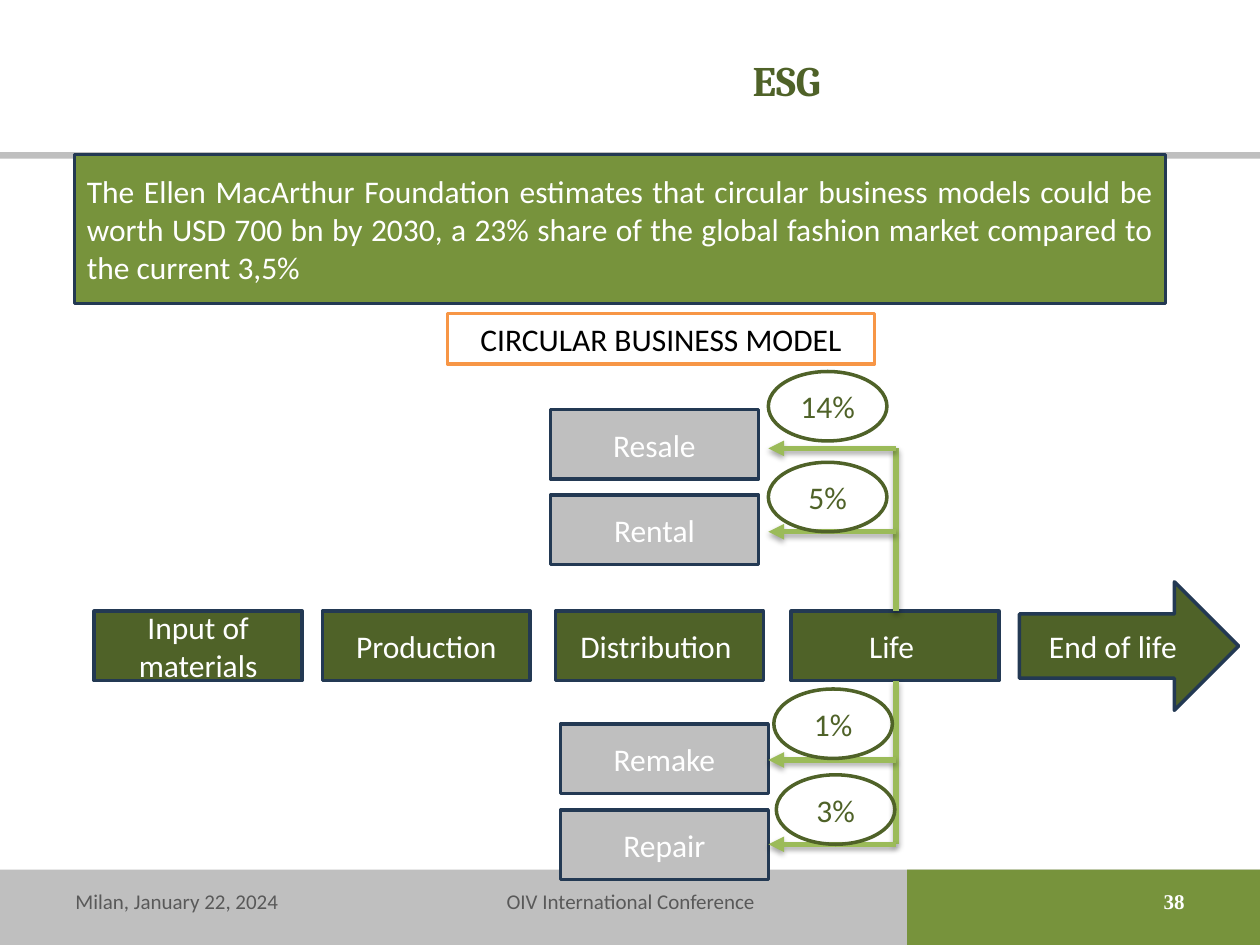
from dataclasses import dataclass

import lxml.etree
import pptx
import pptx.dml.color
import pptx.enum.shapes
import pptx.enum.text
import pptx.oxml
import pptx.oxml.ns
import pptx.util

Cm = pptx.util.Cm
Pt = pptx.util.Pt
RGBColor = pptx.dml.color.RGBColor
Kind = pptx.enum.shapes.MSO_SHAPE
Align = pptx.enum.text.PP_ALIGN

# Colours
WHITE = RGBColor(0xFF, 0xFF, 0xFF)
BLACK = RGBColor(0x00, 0x00, 0x00)
SILVER = RGBColor(0xBF, 0xBF, 0xBF)
GREY = RGBColor(0x59, 0x59, 0x59)
GREEN = RGBColor(0x77, 0x93, 0x3C)
FOREST = RGBColor(0x4F, 0x62, 0x28)
LIME = RGBColor(0x9B, 0xBB, 0x59)
NAVY = RGBColor(0x23, 0x39, 0x53)
ORANGE = RGBColor(0xF7, 0x96, 0x46)

# Shared sizes in centimetres
BOX_W, BOX_H = 4.19, 1.4
OVAL_W = 2.39
ROW_Y = 12.32
STEM_X, TIP_X = 18.06, 15.49
FOOT_Y, FOOT_H = 17.65, 1.02

SHADOW = (
    f'<a:effectLst {pptx.oxml.ns.nsdecls("a")}>'
    '<a:outerShdw blurRad="40000" dist="23000" dir="5400000" rotWithShape="0">'
    '<a:srgbClr val="000000"><a:alpha val="35000"/></a:srgbClr>'
    '</a:outerShdw></a:effectLst>'
)


@dataclass
class Step:
    text: str
    x: float


@dataclass
class Loop:
    text: str
    x: float
    y: float
    share: str
    oval_x: float
    oval_y: float
    line_y: float


STEPS = [
    Step("Input of materials", 1.9),
    Step("Production", 6.5),
    Step("Distribution ", 11.2),
    Step("Life ", 15.95),
]
LOOPS = [
    Loop("Resale", 11.1, 8.26, "14%", 15.49, 7.49, 9.04),
    Loop("Rental", 11.1, 9.98, "5%", 15.49, 9.32, 10.72),
    Loop("Remake", 11.3, 14.6, "1%", 15.6, 13.89, 15.32),
    Loop("Repair", 11.3, 16.33, "3%", 15.65, 15.62, 17.02),
]


def write(shape, text: str, *, size: int = 18, font: str = "Calibri",
          color: RGBColor = WHITE, bold: bool = False,
          align: Align = Align.CENTER) -> None:
    frame = shape.text_frame
    frame.word_wrap = True
    frame.vertical_anchor = pptx.enum.text.MSO_ANCHOR.MIDDLE
    para = frame.paragraphs[0]
    para.alignment = align
    run = para.add_run()
    run.text = text
    run.font.size = Pt(size)
    run.font.name = font
    run.font.bold = bold
    run.font.color.rgb = color


def label(slide, text: str, x: float, y: float, w: float, h: float,
          **style) -> None:
    box = slide.shapes.add_textbox(Cm(x), Cm(y), Cm(w), Cm(h))
    write(box, text, **style)


def block(slide, x: float, y: float, w: float, h: float, *,
          fill: RGBColor | None = None, edge: RGBColor | None = None,
          kind: Kind = Kind.RECTANGLE, text: str = "", **style) -> None:
    shape = slide.shapes.add_shape(kind, Cm(x), Cm(y), Cm(w), Cm(h))
    shape.shadow.inherit = False
    if fill is None:
        shape.fill.background()
    else:
        shape.fill.solid()
        shape.fill.fore_color.rgb = fill
    if edge is None:
        shape.line.fill.background()
    else:
        shape.line.color.rgb = edge
        shape.line.width = Pt(2)
    if text:
        write(shape, text, **style)


def link(slide, x1: float, y1: float, x2: float, y2: float,
         head: bool = False) -> None:
    line = slide.shapes.add_connector(
        pptx.enum.shapes.MSO_CONNECTOR.STRAIGHT,
        Cm(x1), Cm(y1), Cm(x2), Cm(y2))
    line.line.color.rgb = LIME
    line.line.width = Pt(3)
    props = line._element.spPr
    if head:
        edge = props.find(pptx.oxml.ns.qn("a:ln"))
        lxml.etree.SubElement(
            edge, pptx.oxml.ns.qn("a:tailEnd"), type="triangle")
    props.append(pptx.oxml.parse_xml(SHADOW))


def main() -> None:
    deck = pptx.Presentation()
    deck.slide_width, deck.slide_height = Cm(25.4), Cm(19.05)
    slide = deck.slides.add_slide(deck.slide_layouts[6])

    # Bands
    block(slide, 0, 17.53, 25.4, 1.52, fill=SILVER)
    block(slide, 0, 3.07, 25.4, 0.13, fill=SILVER)
    block(slide, 18.29, 17.53, 7.11, 1.52, fill=GREEN)

    # Title and footer
    label(slide, "ESG ", 6.5, 0, 18.9, 3.2, size=24, font="Cambria",
          color=FOREST, bold=True)
    label(slide, "Milan, January 22, 2024", 1.27, FOOT_Y, 5.92, FOOT_H,
          size=12, color=GREY, align=Align.LEFT)
    label(slide, "OIV International Conference", 8.69, FOOT_Y, 8.05, FOOT_H,
          size=12, color=GREY)
    label(slide, "38", 18.21, FOOT_Y, 5.92, FOOT_H, size=12,
          font="Times New Roman", bold=True, align=Align.RIGHT)

    # Value chain
    for step in STEPS:
        block(slide, step.x, ROW_Y, BOX_W, BOX_H, fill=FOREST, edge=NAVY,
              text=step.text)
    block(slide, 20.55, 11.73, 4.42, 2.59, kind=Kind.RIGHT_ARROW,
          fill=FOREST, edge=NAVY, text="End of life")

    # Circular loops: boxes, then links, then shares
    for loop in LOOPS:
        block(slide, loop.x, loop.y, BOX_W, BOX_H, fill=SILVER, edge=NAVY,
              text=loop.text)
    link(slide, STEM_X, ROW_Y, STEM_X, LOOPS[0].line_y)
    link(slide, STEM_X, LOOPS[-1].line_y, STEM_X, ROW_Y + BOX_H)
    for loop in LOOPS:
        link(slide, STEM_X, loop.line_y, TIP_X, loop.line_y, head=True)
    for loop in LOOPS:
        block(slide, loop.oval_x, loop.oval_y, OVAL_W, BOX_H, kind=Kind.OVAL,
              edge=FOREST, text=loop.share, color=FOREST)

    # Key message and heading
    block(slide, 1.5, 3.12, 22, 3, fill=GREEN, edge=NAVY,
          text="The Ellen MacArthur Foundation estimates that circular "
               "business models could be worth USD 700 bn by 2030, a 23% "
               "share of the global fashion market compared to the current "
               "3,5%",
          align=Align.JUSTIFY)
    block(slide, 9.02, 6.32, 8.61, 1.02, fill=WHITE, edge=ORANGE,
          text="CIRCULAR BUSINESS MODEL", color=BLACK)

    deck.save("out.pptx")


if __name__ == "__main__":
    main()
